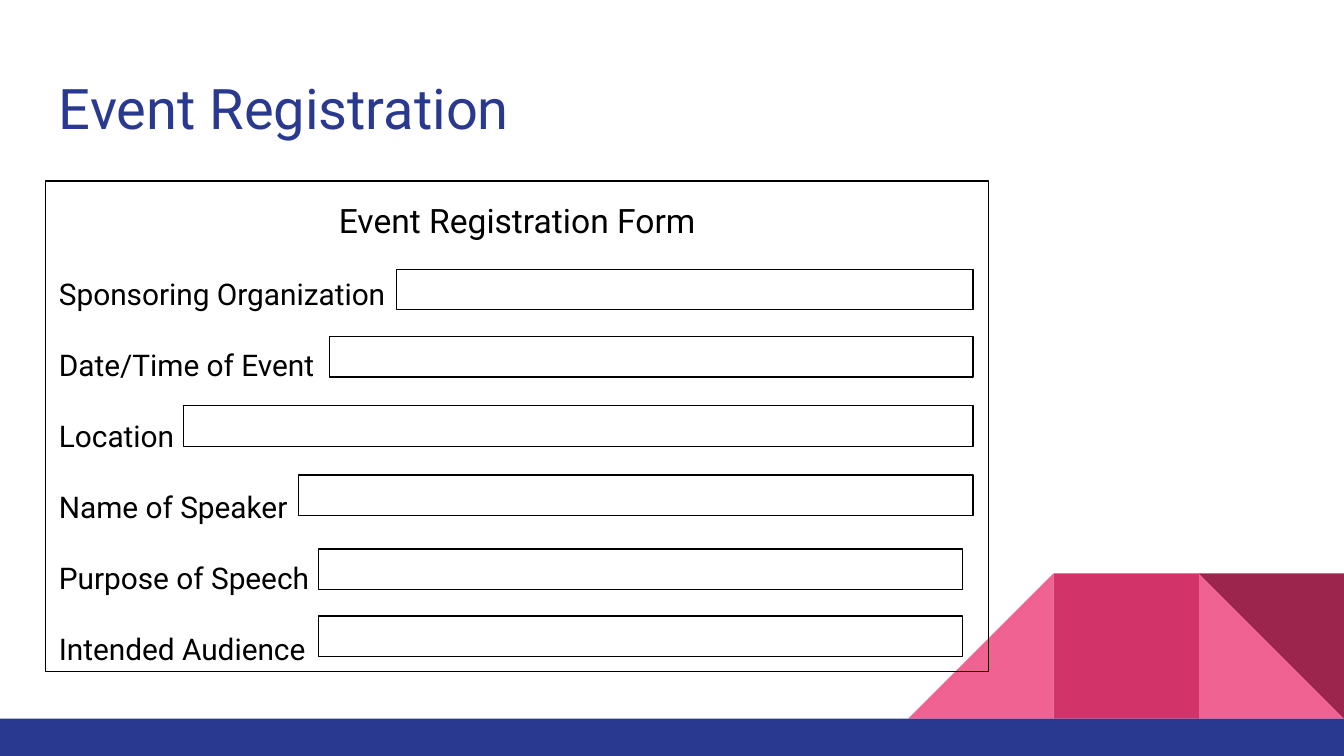
from pptx import Presentation
from pptx.dml.color import RGBColor
from pptx.enum.shapes import MSO_SHAPE
from pptx.enum.text import MSO_ANCHOR, PP_ALIGN
from pptx.util import Pt

COLORS = {"navy": "2A3990", "pink": "F06292", "rose": "D23369",
          "wine": "9C254D", "ink": "000000"}
FONT = "Roboto"
INSET = 7.2

# label, left and top of its entry box, right edge of its entry box
WIDE, NARROW = 496.8, 491.2
FIELDS = [
    ("Sponsoring Organization", 187.9, 47.4, WIDE),
    ("Date/Time of Event", 152, 83.5, WIDE),
    ("Location", 73.8, 120.5, WIDE),
    ("Name of Speaker", 135.5, 157.6, WIDE),
    ("Purpose of Speech", 146, 197.2, NARROW),
    ("Intended Audience", 146, 233.2, NARROW),
]
ENTRY_HEIGHT = 21.7


def color(name):
    return RGBColor.from_string(COLORS[name])


def add_box(slide, kind, left, top, width, height, fill=None, line=None, turn=0):
    box = slide.shapes.add_shape(kind, Pt(left), Pt(top), Pt(width), Pt(height))
    box.shadow.inherit = False
    box.rotation = turn
    if fill:
        box.fill.solid()
        box.fill.fore_color.rgb = color(fill)
    else:
        box.fill.background()
    if line:
        box.line.color.rgb = color(line)
        box.line.width = Pt(0.75)
    else:
        box.line.fill.background()
    return box


def prepare_frame(holder):
    frame = holder.text_frame
    frame.word_wrap = True
    frame.vertical_anchor = MSO_ANCHOR.TOP
    frame.margin_left = frame.margin_right = Pt(INSET)
    frame.margin_top = frame.margin_bottom = Pt(INSET)
    return frame


def write(paragraph, text, size=16, ink="ink", align=PP_ALIGN.LEFT,
          spacing=1.0, before=0, after=0):
    paragraph.alignment = align
    paragraph.line_spacing = spacing
    paragraph.space_before = Pt(before)
    paragraph.space_after = Pt(after)
    run = paragraph.add_run()
    run.text = text
    run.font.name = FONT
    run.font.size = Pt(size)
    run.font.color.rgb = color(ink)


def draw_decoration(slide, left, top, side):
    """Row of three squares; the outer ones are cut into triangles."""
    triangle, square = MSO_SHAPE.RIGHT_TRIANGLE, MSO_SHAPE.RECTANGLE
    for column, kind, fill, turn in [(2, triangle, "pink", 0),
                                     (0, triangle, "pink", 270),
                                     (1, square, "rose", 0),
                                     (2, triangle, "wine", 180)]:
        add_box(slide, kind, left + column * side, top, side, side,
                fill=fill, turn=turn)


def draw_footer(slide, left, top, width, height):
    add_box(slide, MSO_SHAPE.RECTANGLE, left, top, width, height, fill="navy")


def draw_title(slide, left, top, width, height):
    title = slide.shapes.add_textbox(Pt(left), Pt(top), Pt(width), Pt(height))
    write(prepare_frame(title).paragraphs[0], "Event Registration",
          size=30, ink="navy")


def draw_form(slide, left, top, width, height):
    # Frame with heading and labels
    form = add_box(slide, MSO_SHAPE.RECTANGLE, left, top, width, height, line="ink")
    frame = prepare_frame(form)
    write(frame.paragraphs[0], "Event Registration Form", size=18,
          align=PP_ALIGN.CENTER, spacing=1.15)
    for label, entry_left, entry_top, entry_right in FIELDS:
        is_last = label == FIELDS[-1][0]
        write(frame.add_paragraph(), label, spacing=1.15, before=16,
              after=16 if is_last else 0)
        # Entry box beside the label
        add_box(slide, MSO_SHAPE.RECTANGLE, left + entry_left, top + entry_top,
                entry_right - entry_left, ENTRY_HEIGHT, line="ink")


def main():
    deck = Presentation()
    deck.slide_width, deck.slide_height = Pt(720), Pt(405)
    slide = deck.slides.add_slide(deck.slide_layouts[6])
    draw_decoration(slide, 486.6, 307.2, 77.8)
    draw_footer(slide, 0, 385, 720, 20)
    draw_title(slide, 24.5, 32.4, 671, 47.5)
    draw_form(slide, 24.5, 96.9, 505.2, 262.8)
    deck.save("out.pptx")


if __name__ == "__main__":
    main()
